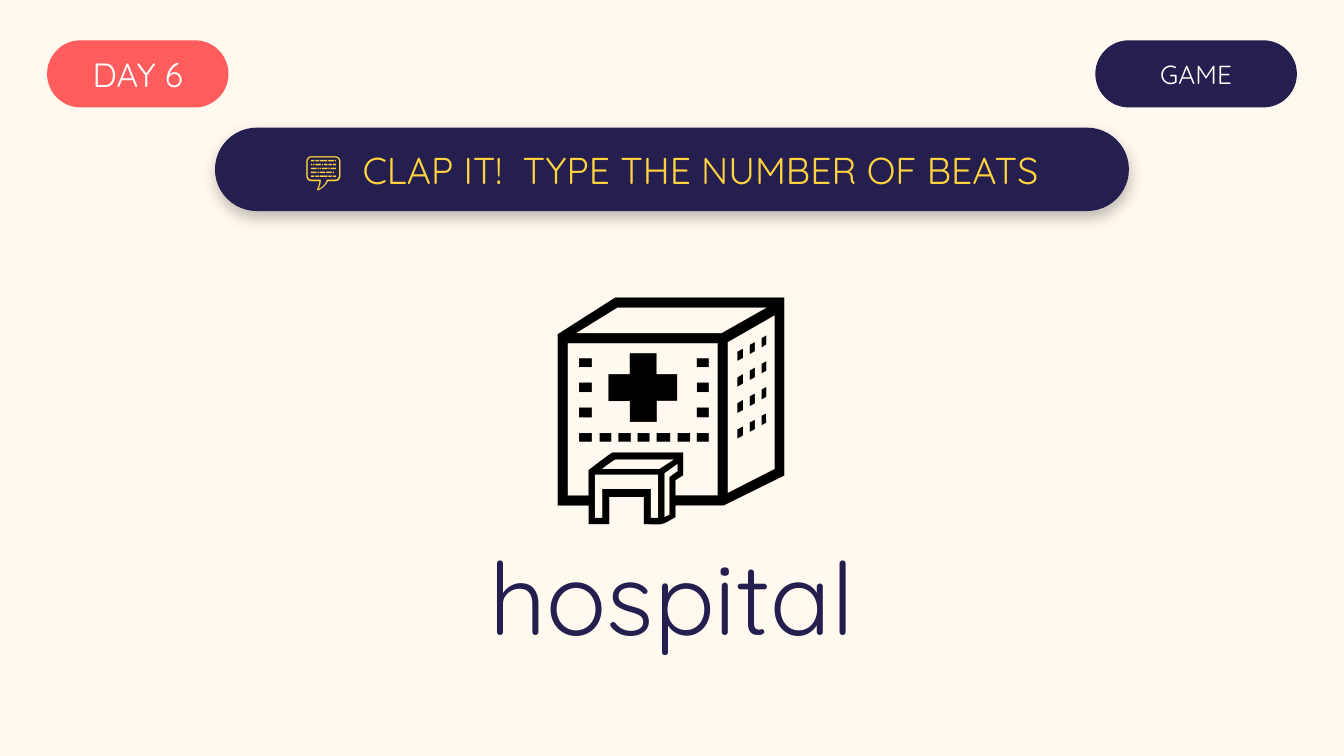
from lxml import etree
from pptx import Presentation
from pptx import util as u
from pptx.dml.color import RGBColor
from pptx.enum import shapes, text
from pptx.oxml.ns import qn

# Square grid cells of 0.05 inch
CELL = 0.05
COLUMNS, ROWS = 200, 112.5
COLORS = {
    "cream": "FFF9EF",
    "coral": "FF5D5D",
    "navy": "241F4E",
    "yellow": "FFD23F",
    "white": "FFFFFF",
    "black": "000000",
}
HEADING_FONT = "Quicksand"
EMOJI_FONT = "Calibri"


def color(name):
    return RGBColor.from_string(COLORS[name])


def grid(*cells):
    return [u.Inches(round(cell * CELL, 2)) for cell in cells]


def write(shape, words, size, color_name, font=HEADING_FONT,
          anchor=text.MSO_ANCHOR.MIDDLE):
    """Fill a shape with one centred line of text."""
    frame = shape.text_frame
    frame.word_wrap = True
    frame.vertical_anchor = anchor
    paragraph = frame.paragraphs[0]
    paragraph.alignment = text.PP_ALIGN.CENTER
    run = paragraph.add_run()
    run.text = words
    run.font.name = font
    run.font.size = u.Pt(size)
    run.font.color.rgb = color(color_name)


def add_pill(slide, area, fill, words, size, color_name):
    """Add a label with fully rounded ends."""
    pill = slide.shapes.add_shape(shapes.MSO_SHAPE.ROUNDED_RECTANGLE, *grid(*area))
    pill.adjustments[0] = 0.5
    pill.shadow.inherit = False
    pill.fill.solid()
    pill.fill.fore_color.rgb = color(fill)
    pill.line.fill.background()
    frame = pill.text_frame
    frame.margin_left = frame.margin_right = 0
    frame.margin_top = frame.margin_bottom = 0
    write(pill, words, size, color_name)
    return pill


def add_drop_shadow(shape, blur, distance, opacity):
    """Cast a soft shadow straight down; opacity is a percentage."""
    effects = shape._element.spPr.find(qn("a:effectLst"))
    shadow = etree.SubElement(
        effects, qn("a:outerShdw"), blurRad=str(u.Pt(blur)),
        dist=str(u.Pt(distance)), dir=str(90 * 60000), rotWithShape="0")
    tint = etree.SubElement(shadow, qn("a:srgbClr"), val=COLORS["black"])
    etree.SubElement(tint, qn("a:alpha"), val=str(opacity * 1000))


def add_line_of_text(slide, top, height, *content, **style):
    """Add a text box across the whole width of the slide."""
    box = slide.shapes.add_textbox(*grid(0, top, COLUMNS, height))
    write(box, *content, **style)


def main():
    presentation = Presentation()
    presentation.slide_width = u.Inches(COLUMNS * CELL)
    presentation.slide_height = u.Inches(ROWS * CELL)
    slide = presentation.slides.add_slide(presentation.slide_layouts[6])
    slide.background.fill.solid()
    slide.background.fill.fore_color.rgb = color("cream")

    add_pill(slide, (7, 6, 27, 10), "coral", "DAY 6", 18, "white")
    add_pill(slide, (163, 6, 30, 10), "navy", "GAME", 14, "white")
    banner = add_pill(slide, (32, 19, 136, 12.4), "navy",
                      "💬  CLAP IT!  TYPE THE NUMBER OF BEATS", 20, "yellow")
    add_drop_shadow(banner, blur=8, distance=3, opacity=25)

    add_line_of_text(slide, 34, 40, "🏥", 130, "black",
                     font=EMOJI_FONT, anchor=text.MSO_ANCHOR.TOP)
    add_line_of_text(slide, 80, 17, "hospital", 54, "navy")

    presentation.save("out.pptx")


if __name__ == "__main__":
    main()
